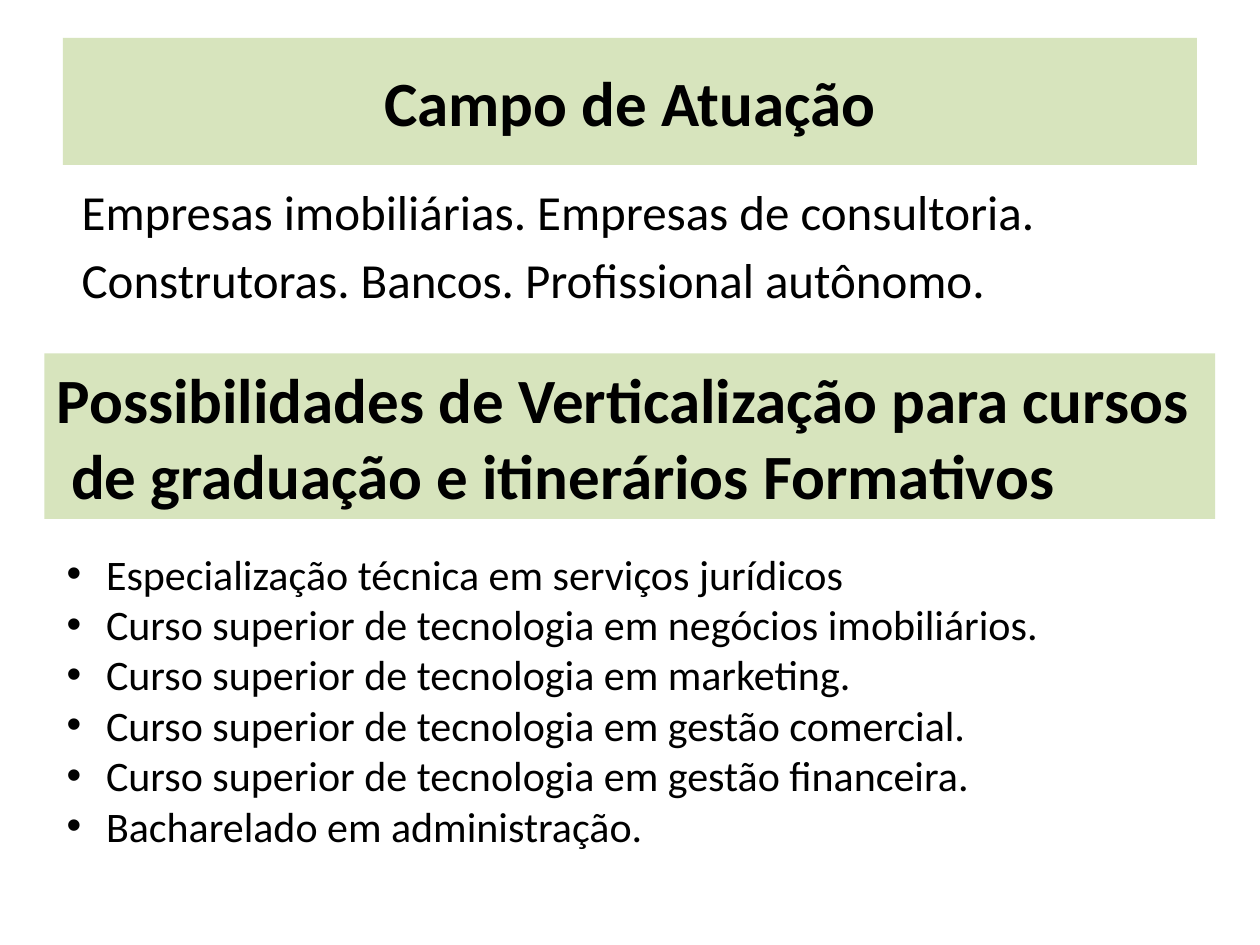
from dataclasses import dataclass

from lxml.etree import SubElement
from pptx import Presentation
from pptx.dml.color import RGBColor
from pptx.enum.shapes import MSO_SHAPE as Shape
from pptx.enum.text import MSO_ANCHOR as Anchor, PP_ALIGN as Align
from pptx.oxml.ns import qn
from pptx.util import Pt


@dataclass(frozen=True)
class Theme:
    font: str = "Calibri"
    ink: RGBColor = RGBColor(0x00, 0x00, 0x00)
    band: RGBColor = RGBColor(0xD7, 0xE4, 0xBD)
    heading: int = 36
    body: int = 28
    item: int = 24
    indent: float = 22.5


class PageBuilder:
    def __init__(self, page, theme):
        self.page = page
        self.theme = theme

    def fill_text(self, box, lines, size, bold=False, align=Align.LEFT, gap=0):
        """Fill a box with one paragraph per line and return the paragraphs."""
        frame = box.text_frame
        frame.word_wrap = True
        frame.text = "\n".join(lines)
        for para in frame.paragraphs:
            para.alignment = align
            para.space_before = Pt(gap)
            font = para.font
            font.name, font.size, font.bold = self.theme.font, Pt(size), bold
            font.color.rgb = self.theme.ink
        return frame.paragraphs

    def heading(self, area, lines, align=Align.LEFT):
        box = self.page.shapes.add_shape(Shape.RECTANGLE, *map(Pt, area))
        box.shadow.inherit = False
        box.fill.solid()
        box.fill.fore_color.rgb = self.theme.band
        box.line.fill.background()
        box.text_frame.vertical_anchor = Anchor.MIDDLE
        self.fill_text(box, lines, self.theme.heading, bold=True, align=align)

    def text(self, area, lines, size, gap=0):
        box = self.page.shapes.add_textbox(*map(Pt, area))
        return self.fill_text(box, lines, size, gap=gap)

    def bullets(self, area, lines):
        indent = Pt(self.theme.indent)
        for para in self.text(area, lines, self.theme.item):
            props = para._p.get_or_add_pPr()
            props.set("marL", str(indent))
            props.set("indent", str(-indent))
            # The bullet goes before the default run properties
            font_mark = SubElement(props, qn("a:buFont"), typeface="Arial")
            mark = SubElement(props, qn("a:buChar"), char="•")
            defaults = props.find(qn("a:defRPr"))
            defaults.addprevious(font_mark)
            defaults.addprevious(mark)


def main():
    deck = Presentation()
    deck.slide_width, deck.slide_height = Pt(720), Pt(540)
    theme = Theme()
    builder = PageBuilder(deck.slides.add_slide(deck.slide_layouts[6]), theme)

    # Field of work
    builder.heading((36, 21.6, 648, 72.7), ["Campo de Atuação"], Align.CENTER)
    builder.text(
        (39.6, 100, 648, 108),
        ["Empresas imobiliárias. Empresas de consultoria.",
         "Construtoras. Bancos. Profissional autônomo."],
        theme.body, gap=theme.body * 0.2)

    # Further study
    builder.heading(
        (25.4, 202, 669, 94.5),
        ["Possibilidades de Verticalização para cursos",
         " de graduação e itinerários Formativos"])
    degree = "Curso superior de tecnologia em"
    fields = ["negócios imobiliários", "marketing",
              "gestão comercial", "gestão financeira"]
    builder.bullets(
        (31, 309.6, 607, 181.5),
        ["Especialização técnica em serviços jurídicos",
         *(f"{degree} {field}." for field in fields),
         "Bacharelado em administração."])

    deck.save("out.pptx")


if __name__ == "__main__":
    main()
